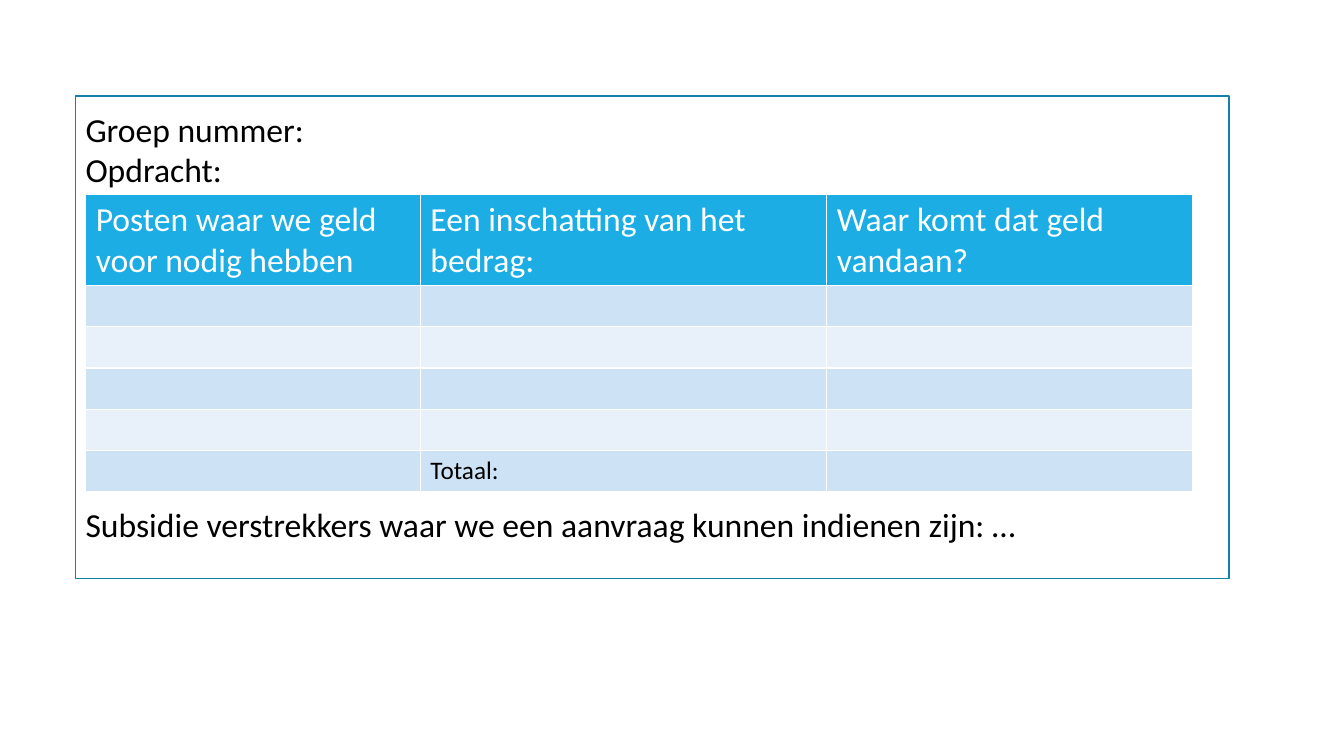
from pptx import Presentation
from pptx.dml.color import RGBColor
from pptx.enum.shapes import MSO_SHAPE
from pptx.util import Inches, Pt

HEADERS = [
    "Posten waar we geld voor nodig hebben",
    "Een inschatting van het bedrag:",
    "Waar komt dat geld vandaan?",
]
BUDGET_ROWS = [HEADERS] + [["", "", ""]] * 4 + [["", "Totaal:", ""]]
COLUMN_WIDTHS = [3.32, 4.03, 3.63]
HEADER_HEIGHT, ROW_HEIGHT = 0.89, 0.41


def color(hex_code):
    return RGBColor.from_string(hex_code)


class BudgetSlide:
    FONT = "Calibri"
    TEXT, HEADER_TEXT, OUTLINE = "000000", "FFFFFF", "1580A9"
    HEADER_FILL, BANDS = "1CADE4", ("E8F1FA", "CDE3F5")

    def __init__(self, presentation):
        self.slide = presentation.slides.add_slide(presentation.slide_layouts[6])

    def style(self, paragraph, size, hex_code):
        font = paragraph.font
        font.name, font.size, font.bold = self.FONT, Pt(size), False
        font.color.rgb = color(hex_code)

    def text(self, lines, left, top, width, height):
        frame = self.slide.shapes.add_textbox(
            Inches(left), Inches(top), Inches(width), Inches(height)).text_frame
        frame.word_wrap = True
        frame.text = "\n".join(lines)
        for paragraph in frame.paragraphs:
            self.style(paragraph, 24, self.TEXT)

    def table(self, rows, left, top):
        """Add a table with a header row; cell borders come from the table style."""
        heights = [HEADER_HEIGHT] + [ROW_HEIGHT] * (len(rows) - 1)
        table = self.slide.shapes.add_table(
            len(rows), len(COLUMN_WIDTHS), Inches(left), Inches(top),
            Inches(sum(COLUMN_WIDTHS)), Inches(sum(heights))).table
        for column, width in zip(table.columns, COLUMN_WIDTHS):
            column.width = Inches(width)
        for r, (labels, height) in enumerate(zip(rows, heights)):
            table.rows[r].height = Inches(height)
            fill = self.BANDS[r % 2] if r else self.HEADER_FILL
            size, text_color = (18, self.TEXT) if r else (24, self.HEADER_TEXT)
            for c, label in enumerate(labels):
                cell = table.cell(r, c)
                cell.fill.solid()
                cell.fill.fore_color.rgb = color(fill)
                cell.text = label
                self.style(cell.text_frame.paragraphs[0], size, text_color)

    def frame(self, left, top, width, height):
        outline = self.slide.shapes.add_shape(
            MSO_SHAPE.RECTANGLE, Inches(left), Inches(top), Inches(width), Inches(height))
        outline.shadow.inherit = False
        outline.fill.background()
        outline.line.color.rgb = color(self.OUTLINE)
        outline.line.width = Pt(1.25)


def main():
    presentation = Presentation()
    presentation.slide_width, presentation.slide_height = Inches(13.33), Inches(7.5)
    budget = BudgetSlide(presentation)
    budget.text(["Groep nummer:", "Opdracht:"], 0.75, 1.03, 12, 0.9)
    budget.table(BUDGET_ROWS, 0.85, 1.93)
    budget.text(["Subsidie verstrekkers waar we een aanvraag kunnen indienen zijn: …"],
                0.75, 4.95, 11.44, 0.5)
    budget.frame(0.75, 0.95, 11.44, 4.79)
    presentation.save("out.pptx")


if __name__ == "__main__":
    main()
